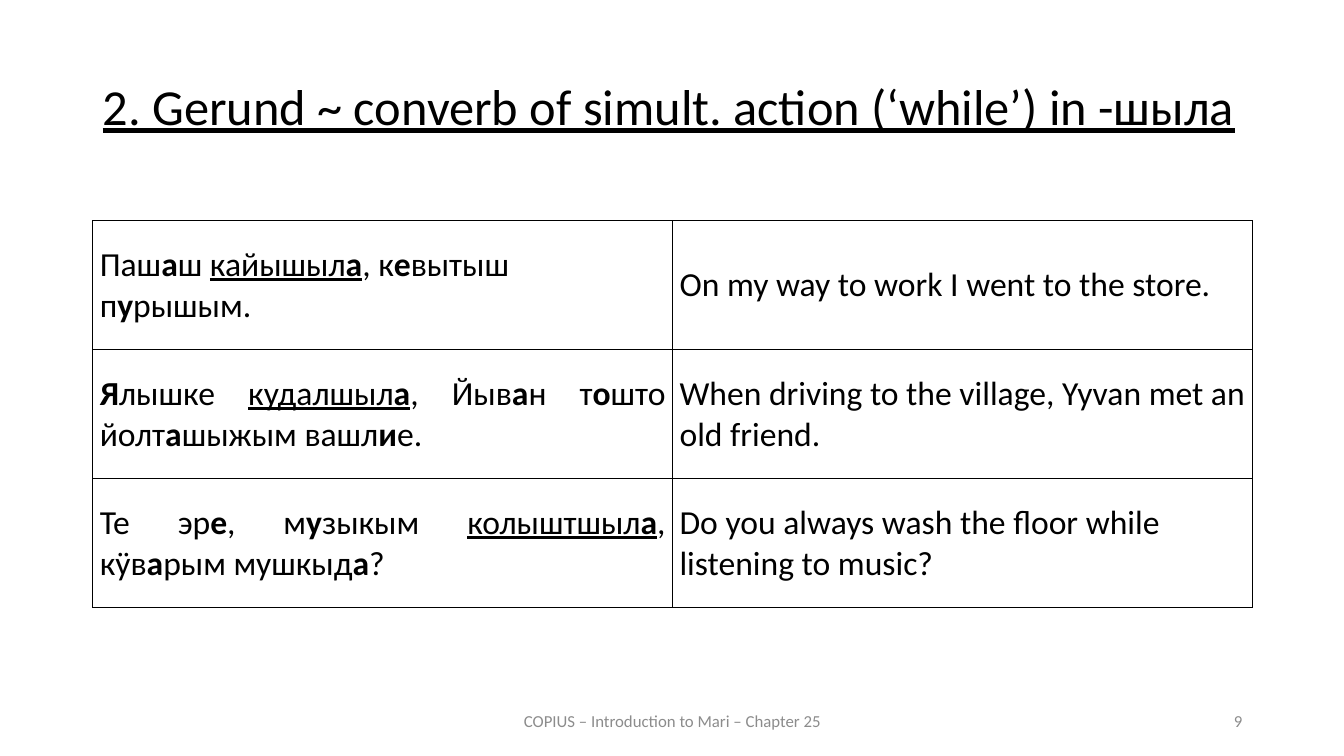
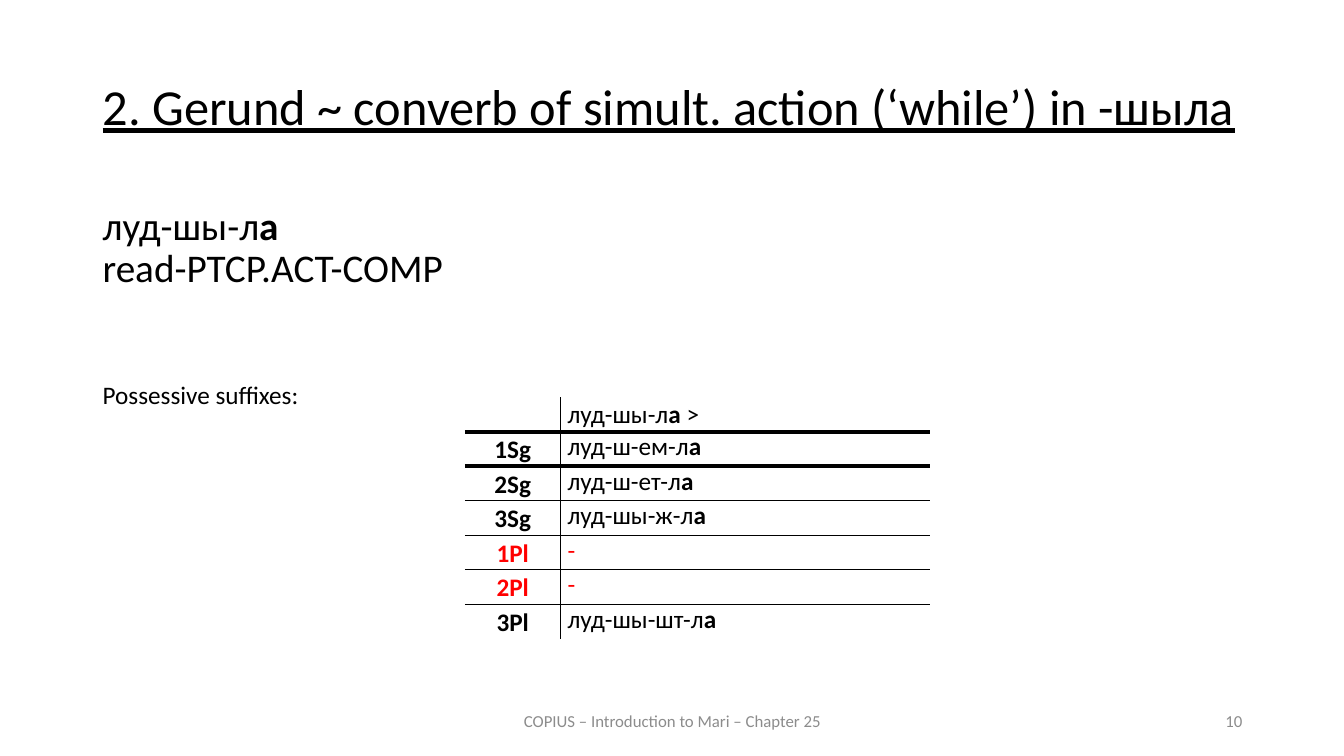
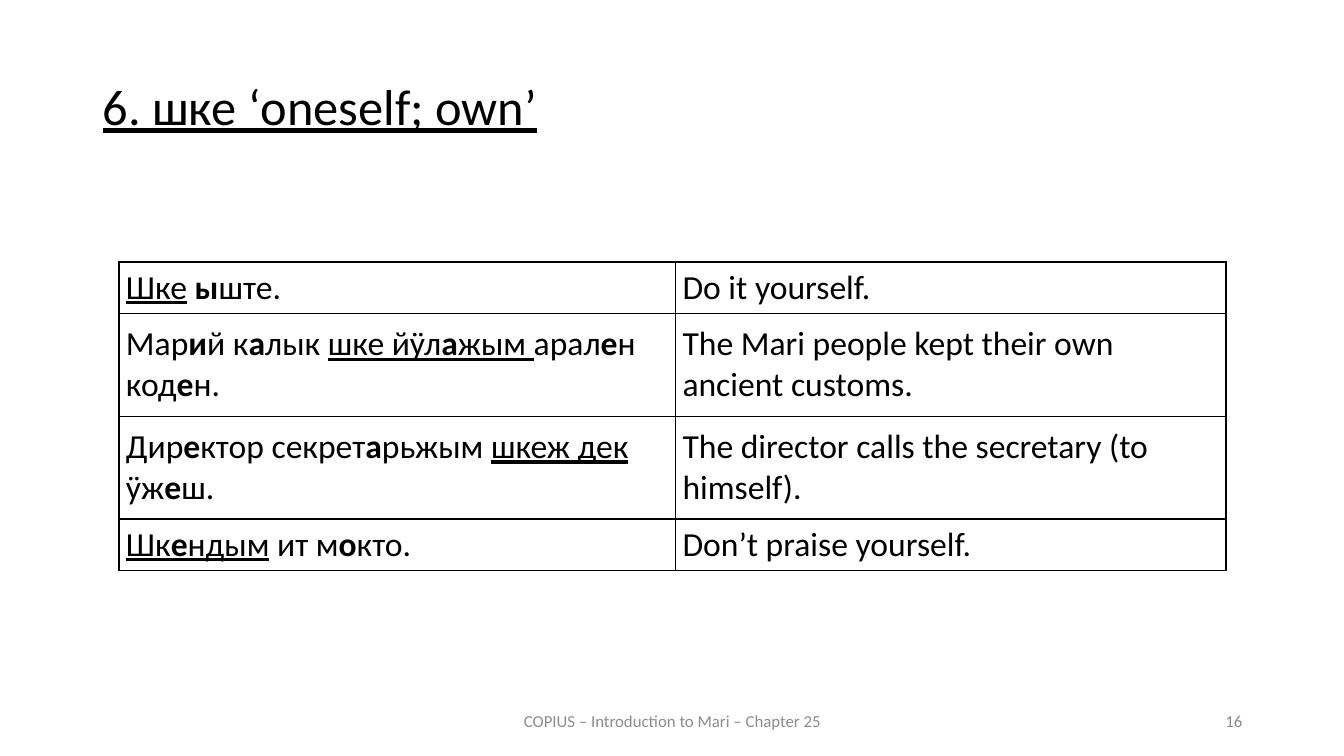
"""Build three slides on Mari gerunds and the reflexive pronoun."""
from dataclasses import dataclass

from lxml import etree
from pptx import Presentation
from pptx import util as u
from pptx.dml.color import RGBColor
from pptx.enum import text
from pptx.oxml.ns import qn

FONT = "Calibri"
BLACK = "000000"
GREY = "8C8C8C"
RED = "FF0000"
LEFT, CENTER, RIGHT, JUSTIFY = (
    text.PP_ALIGN.LEFT, text.PP_ALIGN.CENTER, text.PP_ALIGN.RIGHT, text.PP_ALIGN.JUSTIFY)
TOP, MIDDLE = text.MSO_ANCHOR.TOP, text.MSO_ANCHOR.MIDDLE
MARGIN = 0.92
CONTENT_WIDTH = 11.5
FOOTER = "COPIUS – Introduction to Mari – Chapter 25"
GERUND_TITLE = "2. Gerund ~ converb of simult. action (‘while’) in -шыла"


@dataclass(frozen=True)
class Style:
    """Look of one paragraph and its place in its frame."""
    size: float
    color: str = BLACK
    align: text.PP_ALIGN = LEFT
    anchor: text.MSO_ANCHOR = TOP
    spacing: float = 1.0
    before: float = 0
    underline: bool = False


@dataclass(frozen=True)
class Cell:
    """Marked-up wording of a table cell with its style."""
    wording: str
    style: Style


@dataclass(frozen=True)
class Grid:
    """A table: place, column widths, row heights and line widths of its edges."""
    left: float
    top: float
    columns: list[float]
    heights: list[float]
    column_edges: list[float]
    row_edges: list[float]
    rows: list[list[Cell]]


TITLE = Style(36, align=JUSTIFY, spacing=0.9, before=12, underline=True)
FOOTER_STYLE = Style(12, GREY, CENTER, MIDDLE)
NUMBER_STYLE = Style(12, GREY, RIGHT, MIDDLE)
EXAMPLE = Style(24, anchor=MIDDLE)
JUSTIFIED = Style(24, align=JUSTIFY, anchor=MIDDLE)


def rgb(value: str) -> RGBColor:
    """Turn a hex string into a colour."""
    return RGBColor.from_string(value)


def write(paragraph, wording: str, style: Style) -> None:
    """Write wording in which * toggles bold and _ toggles underline."""
    paragraph.alignment = style.align
    paragraph.line_spacing = style.spacing
    paragraph.space_before = u.Pt(style.before)
    font = paragraph.font
    font.name, font.size = FONT, u.Pt(style.size)
    font.color.rgb = rgb(style.color)
    if style.underline:
        font.underline = True
    underlined = False
    for bold_index, chunk in enumerate(wording.split("*")):
        for line_index, piece in enumerate(chunk.split("_")):
            if line_index:
                underlined = not underlined
            for break_index, line in enumerate(piece.split("\n")):
                if break_index:
                    paragraph.add_line_break()
                if line:
                    run = paragraph.add_run()
                    run.text = line
                    if bold_index % 2:
                        run.font.bold = True
                    if underlined:
                        run.font.underline = True


def add_text(slide, left: float, top: float, width: float, height: float,
             wording: str, style: Style) -> None:
    """Add a wrapping text box."""
    frame = slide.shapes.add_textbox(
        u.Inches(left), u.Inches(top), u.Inches(width), u.Inches(height)).text_frame
    frame.word_wrap = True
    frame.vertical_anchor = style.anchor
    write(frame.paragraphs[0], wording, style)


def add_border(cell, side: str, width: float) -> None:
    """Draw one side of a cell, or clear it when the width is zero."""
    properties = cell._tc.get_or_add_tcPr()
    line = etree.SubElement(properties, qn(f"a:ln{side}"), w=str(u.Pt(width)))
    if width:
        fill = etree.SubElement(line, qn("a:solidFill"))
        etree.SubElement(fill, qn("a:srgbClr"), val=BLACK)
    else:
        etree.SubElement(line, qn("a:noFill"))


def add_grid(slide, grid: Grid) -> None:
    """Add a table with ruled edges and no fill."""
    table = slide.shapes.add_table(
        len(grid.heights), len(grid.columns), u.Inches(grid.left), u.Inches(grid.top),
        u.Inches(sum(grid.columns)), u.Inches(sum(grid.heights))).table
    table.first_row = table.horz_banding = False
    for column, width in zip(table.columns, grid.columns):
        column.width = u.Inches(width)
    for r, (row, height) in enumerate(zip(table.rows, grid.heights)):
        row.height = u.Inches(height)
        for c, content in enumerate(grid.rows[r]):
            cell = table.cell(r, c)
            cell.margin_left = cell.margin_right = u.Inches(0.07)
            cell.margin_top = cell.margin_bottom = 0
            cell.vertical_anchor = content.style.anchor
            add_border(cell, "L", grid.column_edges[c])
            add_border(cell, "R", grid.column_edges[c + 1])
            add_border(cell, "T", grid.row_edges[r])
            add_border(cell, "B", grid.row_edges[r + 1])
            cell.fill.background()
            write(cell.text_frame.paragraphs[0], content.wording, content.style)


def add_examples(slide, left: float, top: float, columns: list[float],
                 heights: list[float], rows: list[list[Cell]]) -> None:
    """Add a fully ruled table of sentences and translations."""
    add_grid(slide, Grid(left, top, columns, heights, [1] * (len(columns) + 1),
                         [1] * (len(heights) + 1), rows))


def add_slide(deck, title: str, number: int):
    """Add a slide with title, footer and number."""
    slide = deck.slides.add_slide(deck.slide_layouts[6])
    add_text(slide, MARGIN, 0.76, CONTENT_WIDTH, 0.83, title, TITLE)
    add_text(slide, 4.42, 6.95, 4.5, 0.4, FOOTER, FOOTER_STYLE)
    add_text(slide, 9.42, 6.95, 3, 0.4, str(number), NUMBER_STYLE)
    return slide


def gerund_examples(deck) -> None:
    """Show the gerund in sentences."""
    slide = add_slide(deck, GERUND_TITLE, 9)
    sentences = [
        ("Паш*а*ш _кайышыл*а*_, к*е*вытыш п*у*рышым.",
         "On my way to work I went to the store.", EXAMPLE),
        ("*Я*лышке _кудалшыл*а*_, Йыв*а*н т*о*што йолт*а*шыжым вашл*и*е.",
         "When driving to the village, Yyvan met an old friend.", JUSTIFIED),
        ("Те эр*е*, м*у*зыкым _колыштшыл*а*_, кӱв*а*рым мушкыд*а*?",
         "Do you always wash the floor while listening to music?", JUSTIFIED),
    ]
    rows = [[Cell(mari, style), Cell(english, EXAMPLE)]
            for mari, english, style in sentences]
    add_examples(slide, MARGIN, 2.19, [CONTENT_WIDTH / 2] * 2, [1.28] * 3, rows)


def gerund_suffixes(deck) -> None:
    """Show the gerund with possessive suffixes."""
    slide = add_slide(deck, GERUND_TITLE, 10)
    add_text(slide, MARGIN, 2, CONTENT_WIDTH, 1.01, "луд-шы-л*а*\nread-PTCP.ACT-COMP",
             Style(28, spacing=0.9, before=10))
    add_text(slide, MARGIN, 3.71, 6.67, 0.4, "Possessive suffixes:", Style(18))
    header = Style(18, align=JUSTIFY, spacing=1.07)
    rows = [[Cell("", header), Cell("луд-шы-л*а* >", header)]]
    for person, form in [("1Sg", "луд-ш-ем-л*а*"), ("2Sg", "луд-ш-ет-л*а*"),
                         ("3Sg", "луд-шы-ж-л*а*"), ("1Pl", "-"), ("2Pl", "-"),
                         ("3Pl", "луд-шы-шт-л*а*")]:
        color = RED if form == "-" else BLACK
        rows.append([Cell(f"*{person}*", Style(18, color, CENTER, MIDDLE, 1.07)),
                     Cell(form, Style(18, color, JUSTIFY))])
    add_grid(slide, Grid(4.61, 3.94, [0.95, 3.66], [2.4 / len(rows)] * len(rows),
                         [0, 1, 0], [0, 3, 3, 1, 1, 1, 1, 0], rows))


def reflexive_examples(deck) -> None:
    """Show the reflexive pronoun in sentences."""
    slide = add_slide(deck, "6. шке ‘oneself; own’", 16)
    single, double = 0.51, 1.02
    blocks = [
        [("_Шке_ *ы*ште.", "Do it yourself.", single)],
        [("Мар*и*й к*а*лык _шке йӱл*а*жым _арал*е*н код*е*н.",
          "The Mari people kept their own ancient customs.", double)],
        [("Дир*е*ктор секрет*а*рьжым _шкеж дек_ ӱж*е*ш.",
          "The director calls the secretary (to himself).", double),
         ("_Шк*е*ндым_ ит м*о*кто.", "Don’t praise yourself.", single)],
    ]
    top = 2.6
    for block in blocks:
        heights = [height for _, _, height in block]
        rows = []
        for mari, english, height in block:
            style = JUSTIFIED if height == single else EXAMPLE
            rows.append([Cell(mari, style), Cell(english, style)])
        add_examples(slide, 1.18, top, [5.52, 5.46], heights, rows)
        top += sum(heights)


def main() -> None:
    """Build and save the presentation."""
    deck = Presentation()
    deck.slide_width, deck.slide_height = u.Inches(13.33), u.Inches(7.5)
    gerund_examples(deck)
    gerund_suffixes(deck)
    reflexive_examples(deck)
    deck.save("out.pptx")


if __name__ == "__main__":
    main()
